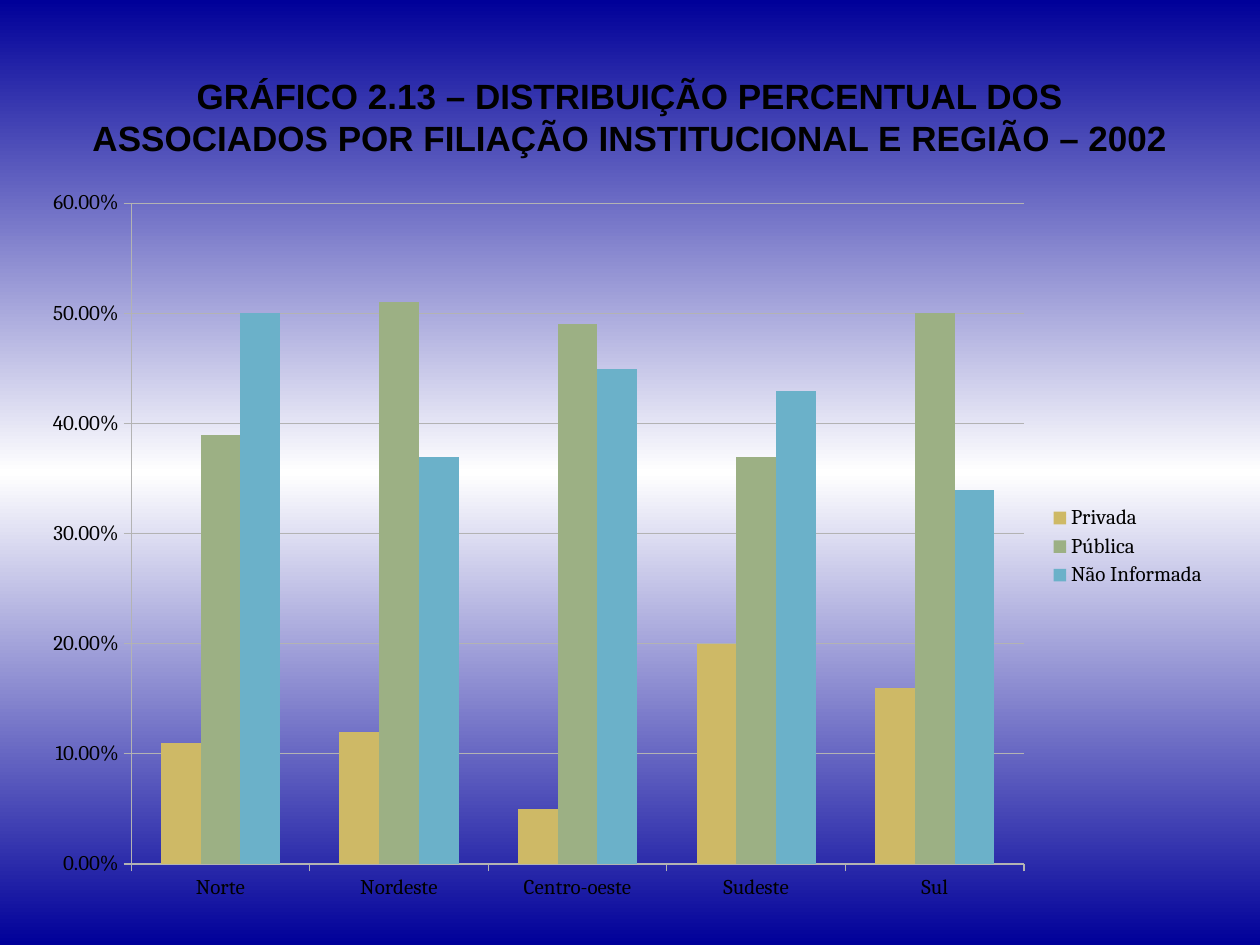
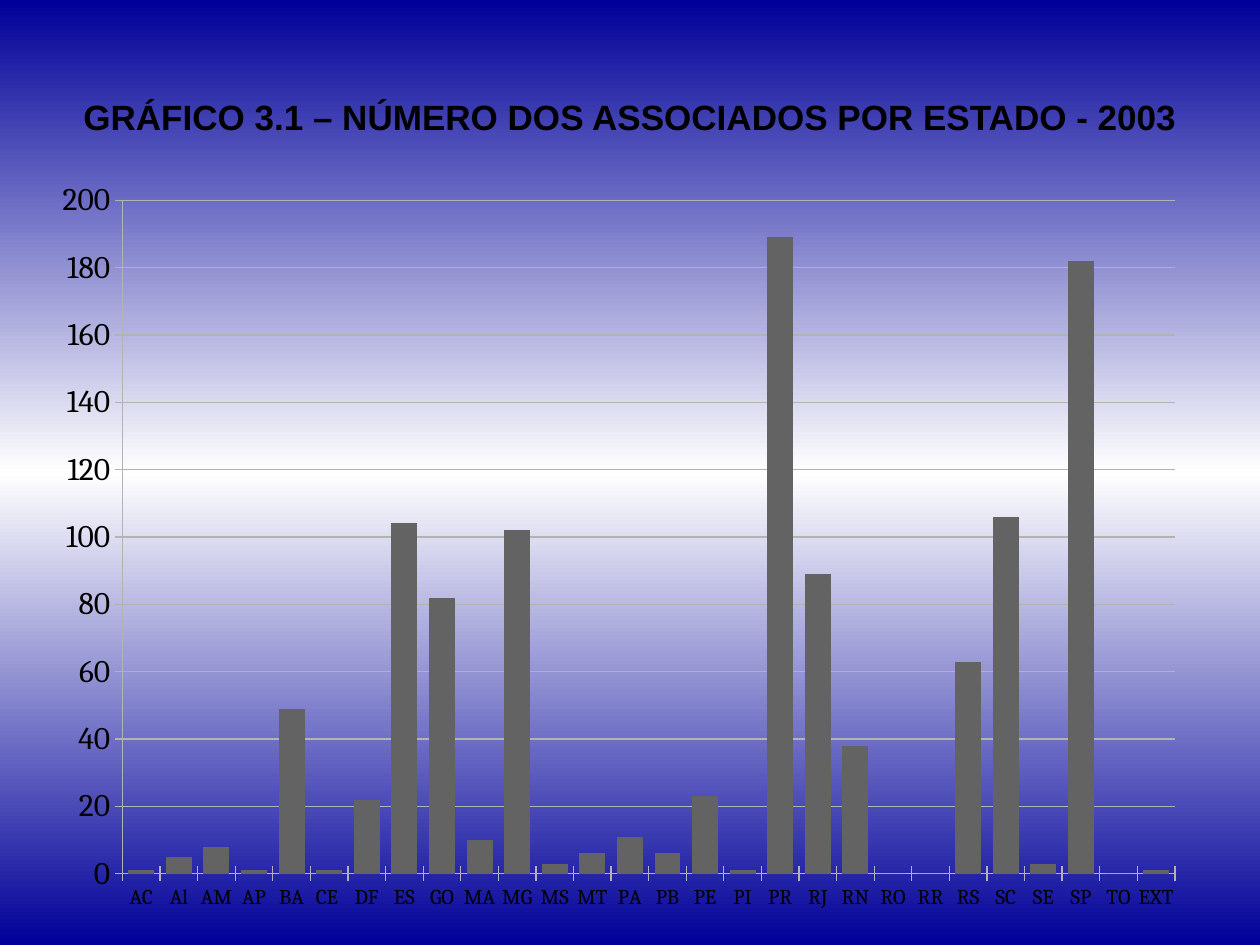
"""Build two slides with column charts of associates by region and by state."""
from lxml.etree import SubElement
from pptx import Presentation
from pptx.chart.data import CategoryChartData
from pptx.dml.color import RGBColor
from pptx.enum.chart import XL_CHART_TYPE, XL_LEGEND_POSITION, XL_TICK_LABEL_POSITION, XL_TICK_MARK
from pptx.enum.text import MSO_ANCHOR, MSO_AUTO_SIZE, PP_ALIGN
from pptx.oxml.ns import qn
from pptx.util import Cm, Pt

BLUE, WHITE, BLACK, GRID_GREY = "000099", "FFFFFF", "000000", "B3B3B3"
TITLE_FONT, CHART_FONT = "Arial", "Cambria"
REGIONS = ["Norte", "Nordeste", "Centro-oeste", "Sudeste", "Sul"]
AFFILIATIONS = {
    "Privada": ([0.11, 0.12, 0.05, 0.2, 0.16], "CEB966"),
    "Pública": ([0.39, 0.51, 0.49, 0.37, 0.5], "9CB084"),
    "Não Informada": ([0.5, 0.37, 0.45, 0.43, 0.34], "6BB1C9"),
}
STATES = ["AC", "Al", "AM", "AP", "BA", "CE ", "DF", "ES", "GO", "MA", "MG", "MS", "MT", "PA",
          "PB", "PE", "PI", "PR", "RJ", "RN", "RO", "RR", "RS", "SC", "SE", "SP", "TO", "EXT"]
ASSOCIATES = {
    "Series 1": ([1, 5, 8, 1, 49, 1, 22, 104, 82, 10, 102, 3, 6, 11,
                  6, 23, 1, 189, 89, 38, 0, 0, 63, 106, 3, 182, 0, 1], "636363"),
}


def color(value):
    return RGBColor.from_string(value)


def set_background(master):
    fill = master.background.fill
    fill.gradient()
    fill.gradient_angle = 90
    stops = master.element.find(".//" + qn("a:gsLst"))
    for stop in list(stops):
        stops.remove(stop)
    for position, value in ((0, BLUE), (50, WHITE), (100, BLUE)):
        stop = SubElement(stops, qn("a:gs"), pos=str(position * 1000))
        SubElement(stop, qn("a:srgbClr"), val=value)


def add_titled_slide(presentation, text):
    slide = presentation.slides.add_slide(presentation.slide_layouts[5])
    title = slide.shapes.title
    title.left, title.top, title.width, title.height = Cm(1.27), Cm(0.76), Cm(22.86), Cm(3.18)
    frame = title.text_frame
    frame.text = text
    frame.word_wrap = True
    frame.auto_size = MSO_AUTO_SIZE.NONE
    frame.vertical_anchor = MSO_ANCHOR.MIDDLE
    paragraph = frame.paragraphs[0]
    paragraph.alignment = PP_ALIGN.CENTER
    set_font(paragraph.font, TITLE_FONT, 20, bold=True)
    return slide


def set_font(font, name, size, bold=False):
    font.name, font.size, font.bold = name, Pt(size), bold
    font.color.rgb = color(BLACK)


def set_plot_layout(chart, fractions):
    plot_area = chart.element.find(".//" + qn("c:plotArea"))
    layout = plot_area.find(qn("c:layout"))
    if layout is None:
        layout = SubElement(plot_area, qn("c:layout"))
        plot_area.insert(0, layout)
    manual = SubElement(layout, qn("c:manualLayout"))
    settings = [("layoutTarget", "inner"), ("xMode", "edge"), ("yMode", "edge")]
    for name, value in settings + list(zip("xywh", fractions)):
        SubElement(manual, qn("c:" + name), val=str(value))


def style_axis(axis):
    axis.major_tick_mark = XL_TICK_MARK.OUTSIDE
    axis.minor_tick_mark = XL_TICK_MARK.NONE
    axis.format.line.color.rgb = color(GRID_GREY)
    axis.format.line.width = Pt(0.75)


def style_value_axis(axis, maximum, step, number_format):
    style_axis(axis)
    axis.minimum_scale, axis.maximum_scale, axis.major_unit = 0, maximum, step
    axis.has_major_gridlines = True
    axis.major_gridlines.format.line.color.rgb = color(GRID_GREY)
    axis.major_gridlines.format.line.width = Pt(0.75)
    axis.tick_labels.number_format = number_format
    axis.tick_labels.number_format_is_linked = False


def add_column_chart(slide, chart_type, box, categories, series, font_size, gap, overlap, layout):
    data = CategoryChartData()
    data.categories = categories
    for name, (values, _) in series.items():
        data.add_series(name, values)
    chart = slide.shapes.add_chart(chart_type, *map(Cm, box), data).chart
    chart.has_title = chart.has_legend = False
    set_font(chart.font, CHART_FONT, font_size)
    plot = chart.plots[0]
    plot.vary_by_categories = False
    plot.gap_width, plot.overlap = gap, overlap
    for column, (_, fill_color) in zip(plot.series, series.values()):
        column.format.fill.solid()
        column.format.fill.fore_color.rgb = color(fill_color)
    style_axis(chart.category_axis)
    set_plot_layout(chart, layout)
    return chart


def add_region_slide(presentation):
    slide = add_titled_slide(
        presentation,
        "GRÁFICO 2.13 – DISTRIBUIÇÃO PERCENTUAL DOS ASSOCIADOS POR FILIAÇÃO "
        "INSTITUCIONAL E REGIÃO – 2002")
    chart = add_column_chart(slide, XL_CHART_TYPE.COLUMN_CLUSTERED, (0.58, 3.58, 24, 14.88),
                             REGIONS, AFFILIATIONS, 12, 150, 0, (0.086, 0.035, 0.75, 0.895))
    style_value_axis(chart.value_axis, 0.6, 0.1, "0.00%")
    chart.has_legend = True
    chart.legend.position = XL_LEGEND_POSITION.RIGHT
    chart.legend.include_in_layout = False


def add_state_slide(presentation):
    slide = add_titled_slide(presentation, "GRÁFICO 3.1 – NÚMERO DOS ASSOCIADOS POR ESTADO - 2003")
    chart = add_column_chart(slide, XL_CHART_TYPE.COLUMN_STACKED, (0.79, 3.38, 23.34, 15.29),
                             STATES, ASSOCIATES, 18, 45, 100, (0.072, 0.043, 0.909, 0.888))
    style_value_axis(chart.value_axis, 200, 20, "General")
    axis = chart.category_axis
    axis.major_tick_mark = XL_TICK_MARK.CROSS
    axis.tick_label_position = XL_TICK_LABEL_POSITION.LOW
    set_font(axis.tick_labels.font, CHART_FONT, 12)


def main():
    presentation = Presentation()
    presentation.slide_width, presentation.slide_height = Cm(25.4), Cm(19.05)
    set_background(presentation.slide_master)
    add_region_slide(presentation)
    add_state_slide(presentation)
    presentation.save("out.pptx")


if __name__ == "__main__":
    main()
